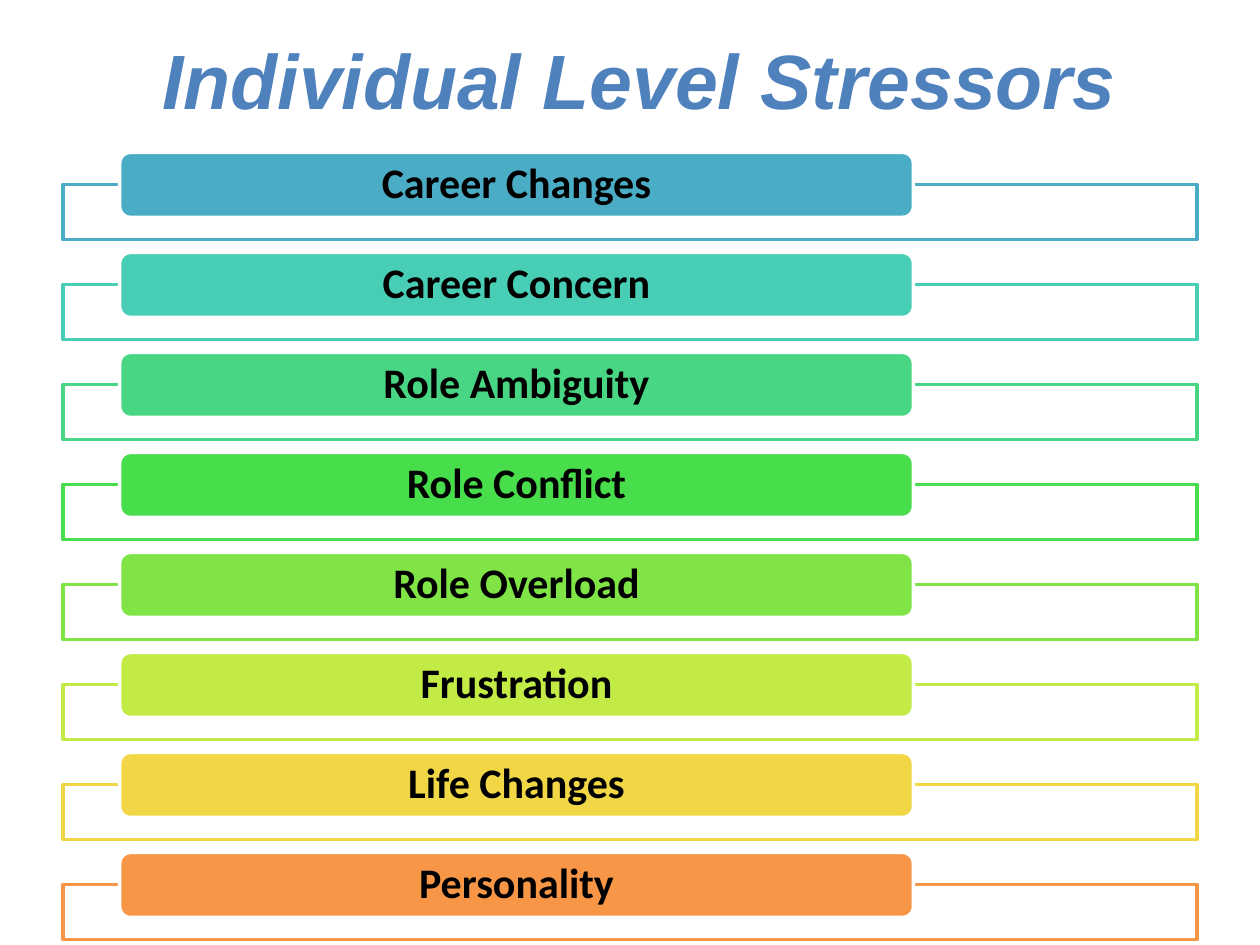
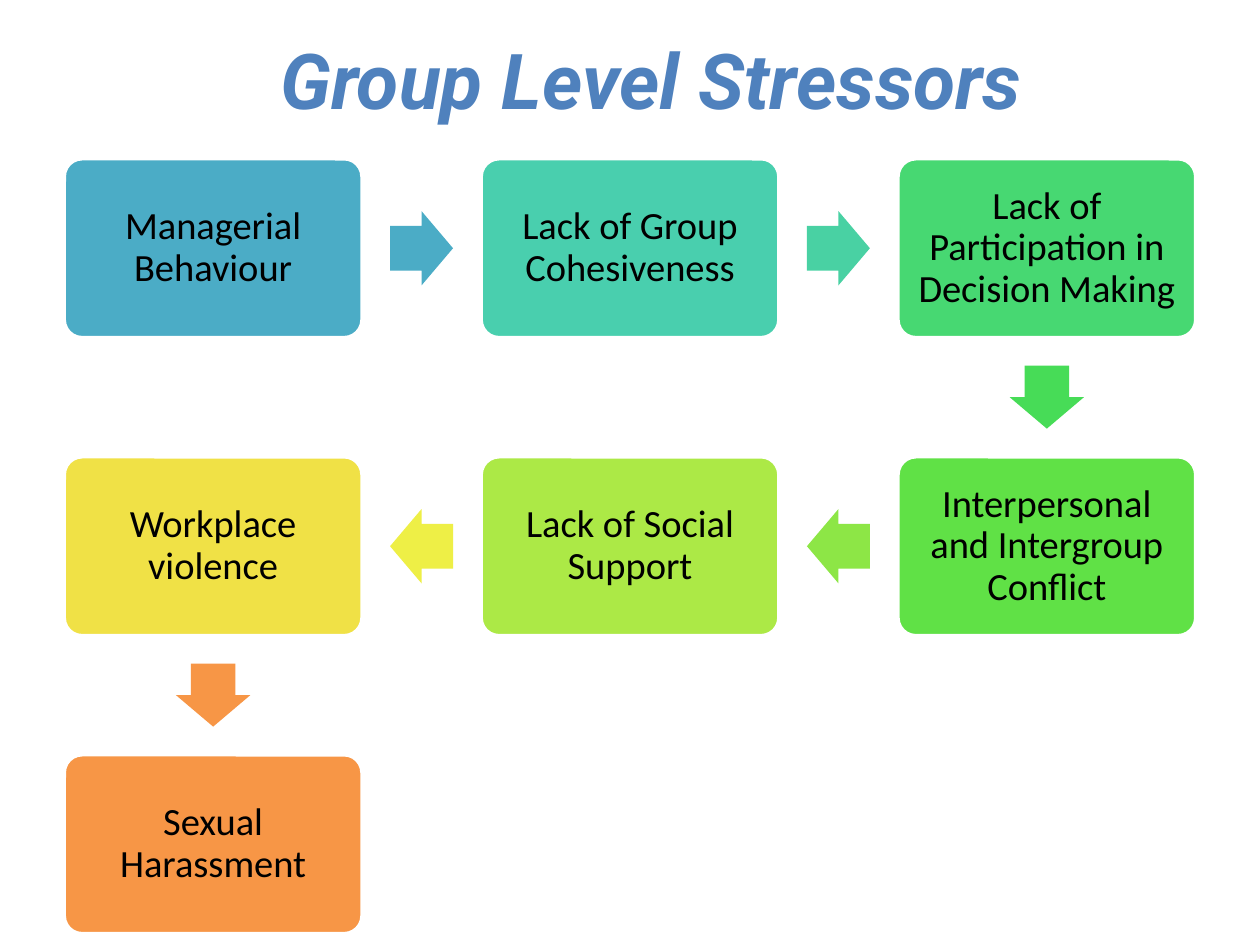
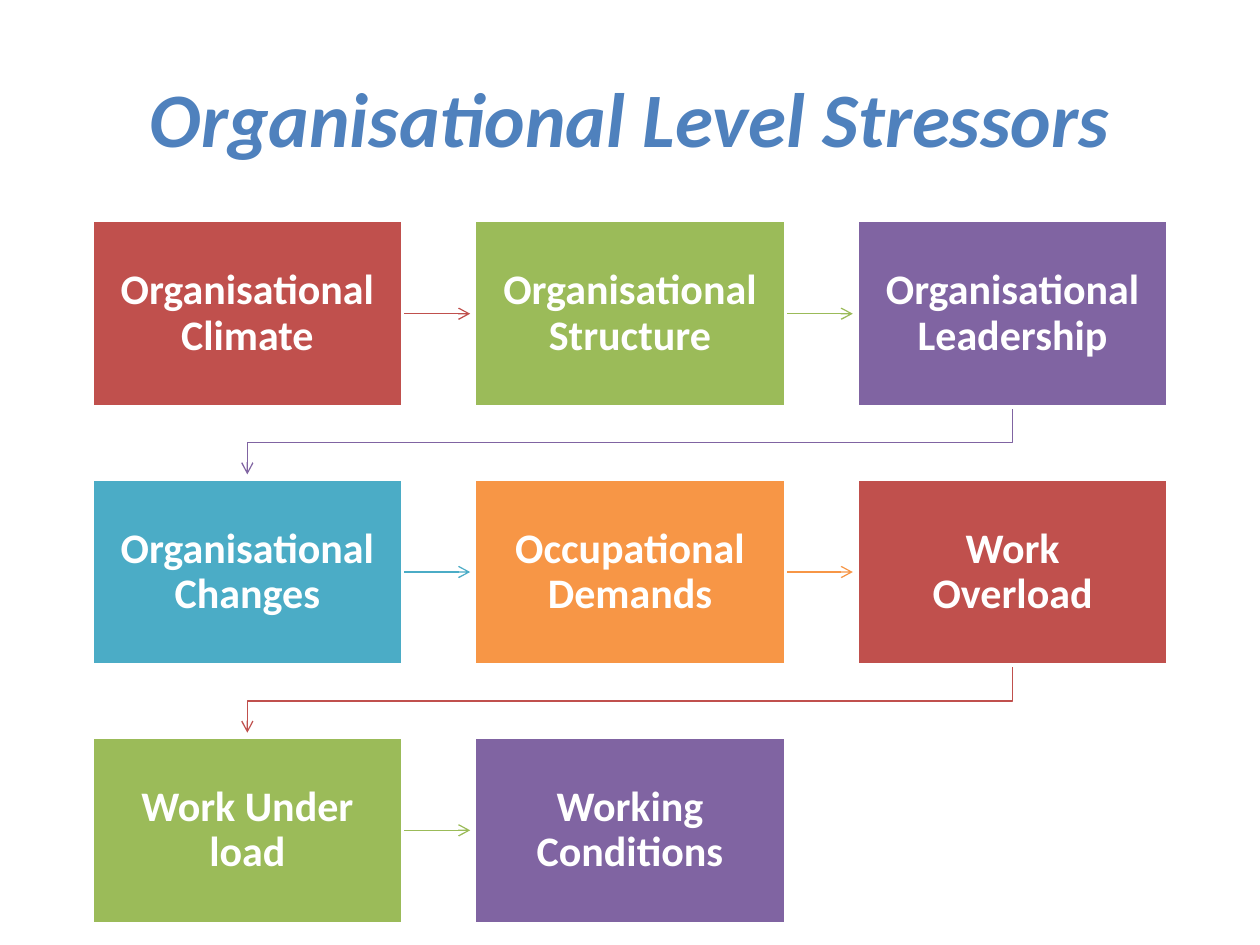
from dataclasses import dataclass
from itertools import pairwise

from lxml.etree import SubElement
from pptx import Presentation
from pptx.dml.color import RGBColor
from pptx.enum.shapes import MSO_CONNECTOR, MSO_SHAPE
from pptx.enum.text import MSO_ANCHOR, PP_ALIGN
from pptx.oxml.ns import qn
from pptx.util import Inches, Pt

SLIDE_WIDTH = Inches(10)
SLIDE_HEIGHT = Inches(7.5)
GRID_COLUMNS = 100
GRID_CELL = SLIDE_WIDTH / GRID_COLUMNS
BLANK_LAYOUT = 6

COLORS = {
    "title": "4F81BD",
    "white": "FFFFFF",
    "black": "000000",
    "red": "C0504D",
    "olive": "9BBB59",
    "purple": "8064A2",
    "blue": "4BACC6",
    "orange": "F79646",
    "turquoise": "49CEB6",
    "emerald": "48D684",
    "green": "47DD4B",
    "lime": "80E446",
    "chartreuse": "C3EB46",
    "gold": "F1D746",
    "mint": "49CFAE",
    "mint arrow": "49D1A3",
    "jade": "47D872",
    "jade arrow": "47DC57",
    "grass": "60E146",
    "grass arrow": "8DE646",
    "pear": "ACE946",
    "lemon arrow": "EEEF46",
    "lemon": "F0E146",
}

INDIVIDUAL_STRESSORS = [
    ("Career Changes", "blue"),
    ("Career Concern", "turquoise"),
    ("Role Ambiguity", "emerald"),
    ("Role Conflict", "green"),
    ("Role Overload", "lime"),
    ("Frustration", "chartreuse"),
    ("Life Changes", "gold"),
    ("Personality", "orange"),
]

GROUP_STRESSORS = [
    ("Managerial Behaviour", "blue"),
    ("Lack of Group Cohesiveness", "mint"),
    ("Lack of Participation in Decision Making", "jade"),
    ("Interpersonal and Intergroup Conflict", "grass"),
    ("Lack of Social Support", "pear"),
    ("Workplace violence", "lemon"),
    ("Sexual Harassment", "orange"),
]
GROUP_ARROWS = ["blue", "mint arrow", "jade arrow", "grass arrow", "lemon arrow", "orange"]

ORGANISATIONAL_STRESSORS = [
    ("Organisational Climate", "red"),
    ("Organisational Structure", "olive"),
    ("Organisational Leadership", "purple"),
    ("Organisational Changes", "blue"),
    ("Occupational Demands", "orange"),
    ("Work Overload", "red"),
    ("Work Under load", "olive"),
    ("Working Conditions", "purple"),
]


@dataclass
class Box:
    left: float
    top: float
    width: float
    height: float

    @property
    def right(self):
        return self.left + self.width

    @property
    def bottom(self):
        return self.top + self.height

    @property
    def center(self):
        return self.left + self.width / 2, self.top + self.height / 2

    def share(self, left, top, width, height):
        return Box(
            self.left + left * self.width,
            self.top + top * self.height,
            width * self.width,
            height * self.height,
        )

    def cell(self, column, row, columns, rows, gap=0):
        width = (self.width - gap * (columns - 1)) / columns
        height = (self.height - gap * (rows - 1)) / rows
        return Box(
            self.left + column * (width + gap),
            self.top + row * (height + gap),
            width,
            height,
        )

    def lengths(self):
        return [grid(value) for value in (self.left, self.top, self.width, self.height)]


def grid(cells):
    return round(cells * GRID_CELL)


def color(name):
    return RGBColor.from_string(COLORS[name])


def write_text(shape, text, size, color_name, font="Calibri", bold=False, italic=False):
    frame = shape.text_frame
    frame.word_wrap = True
    frame.vertical_anchor = MSO_ANCHOR.MIDDLE
    paragraph = frame.paragraphs[0]
    paragraph.text = text
    paragraph.alignment = PP_ALIGN.CENTER
    paragraph.font.name = font
    paragraph.font.size = Pt(size)
    paragraph.font.bold = bold
    paragraph.font.italic = italic
    paragraph.font.color.rgb = color(color_name)
    return paragraph


def add_title(slide, box, text, font):
    title = slide.shapes.add_textbox(*box.lengths())
    write_text(title, text, 44, "title", font, bold=True, italic=True)


def add_block(slide, kind, box, fill, line=None):
    block = slide.shapes.add_shape(kind, *box.lengths())
    block.shadow.inherit = False
    block.fill.solid()
    block.fill.fore_color.rgb = color(fill)
    if line:
        block.line.color.rgb = color(line)
        block.line.width = Pt(2)
    else:
        block.line.fill.background()
    return block


def add_label(slide, kind, box, text, fill, size, text_color, inset, bold):
    label = add_block(slide, kind, box, fill, "white")
    frame = label.text_frame
    frame.margin_left = frame.margin_right = grid(inset)
    frame.margin_top = frame.margin_bottom = grid(inset)
    paragraph = write_text(label, text, size, text_color, bold=bold)
    paragraph.line_spacing = 0.9
    return label


def add_stressor_bands(slide, box):
    for row, (text, fill) in enumerate(INDIVIDUAL_STRESSORS):
        band = box.cell(0, row, 1, len(INDIVIDUAL_STRESSORS))
        add_block(slide, MSO_SHAPE.RECTANGLE, band.share(0, 0.32, 1, 0.55), "white", fill)
        tab = band.share(0.05, 0, 0.7, 0.65)
        add_label(slide, MSO_SHAPE.ROUNDED_RECTANGLE, tab, text, fill, 24, "black", 0, True)


def add_block_arrow(slide, start, end, fill):
    (start_x, start_y), (end_x, end_y) = start.center, end.center
    if start.top != end.top:
        rotation = 90
    else:
        rotation = 0 if end_x > start_x else 180
    width, height = 5, 5.9
    middle_x, middle_y = (start_x + end_x) / 2, (start_y + end_y) / 2
    box = Box(middle_x - width / 2, middle_y - height / 2, width, height)
    arrow = add_block(slide, MSO_SHAPE.RIGHT_ARROW, box, fill)
    arrow.adjustments[0] = 0.6
    arrow.adjustments[1] = 0.5
    arrow.rotation = rotation


def add_winding_flow(slide, box):
    columns, rows, gap = 3, 3, 9.45
    cells = []
    for index, (text, fill) in enumerate(GROUP_STRESSORS):
        row, step = divmod(index, columns)
        column = columns - 1 - step if row % 2 else step
        cell = box.cell(column, row, columns, rows, gap)
        cells.append(cell)
        label = add_label(
            slide, MSO_SHAPE.ROUNDED_RECTANGLE, cell, text, fill, 22, "black", 0.9, False
        )
        label.adjustments[0] = 0.1
    for (start, end), fill in zip(pairwise(cells), GROUP_ARROWS):
        add_block_arrow(slide, start, end, fill)


def style_thin_arrow(arrow, color_name):
    arrow.line.color.rgb = color(color_name)
    arrow.line.width = Pt(0.75)
    properties = arrow.element.spPr
    SubElement(properties.find(qn("a:ln")), qn("a:tailEnd"), type="arrow")
    SubElement(properties, qn("a:effectLst"))


def add_straight_arrow(slide, start, end, color_name):
    height = grid(start.center[1])
    arrow = slide.shapes.add_connector(
        MSO_CONNECTOR.STRAIGHT, grid(start.right), height, grid(end.left - 0.35), height
    )
    style_thin_arrow(arrow, color_name)


def add_return_arrow(slide, start, end, color_name):
    start_x, end_x = grid(start.center[0]), grid(end.center[0])
    turn = grid((start.bottom + end.top) / 2)
    builder = slide.shapes.build_freeform(start_x, grid(start.bottom))
    builder.add_line_segments(
        [(start_x, turn), (end_x, turn), (end_x, grid(end.top - 0.35))], close=False
    )
    arrow = builder.convert_to_shape()
    arrow.fill.background()
    style_thin_arrow(arrow, color_name)


def add_reading_flow(slide, box):
    columns, rows, gap = 3, 3, 5.7
    cells = [
        box.cell(index % columns, index // columns, columns, rows, gap)
        for index in range(len(ORGANISATIONAL_STRESSORS))
    ]
    for (start, end), (_, fill) in zip(pairwise(cells), ORGANISATIONAL_STRESSORS):
        add_arrow = add_straight_arrow if end.left > start.left else add_return_arrow
        add_arrow(slide, start, end, fill)
    for cell, (text, fill) in zip(cells, ORGANISATIONAL_STRESSORS):
        add_label(slide, MSO_SHAPE.RECTANGLE, cell, text, fill, 24, "white", 1.9, True)


def main():
    presentation = Presentation()
    presentation.slide_width = SLIDE_WIDTH
    presentation.slide_height = SLIDE_HEIGHT
    pages = [
        ("Individual Level Stressors", "Arial", Box(5.8, 0, 90, 12.5),
         add_stressor_bands, Box(5, 12.1, 90, 63.5)),
        ("Group Level Stressors", "Roboto", Box(6.7, 0, 90, 12.5),
         add_winding_flow, Box(5.1, 12.6, 89.8, 61.5)),
        ("Organisational Level Stressors", "Calibri", Box(5, 3, 90, 12.5),
         add_reading_flow, Box(7.3, 17.5, 85.4, 55.8)),
    ]
    for title, font, title_box, add_diagram, diagram_box in pages:
        slide = presentation.slides.add_slide(presentation.slide_layouts[BLANK_LAYOUT])
        add_title(slide, title_box, title, font)
        add_diagram(slide, diagram_box)
    presentation.save("out.pptx")


if __name__ == "__main__":
    main()
